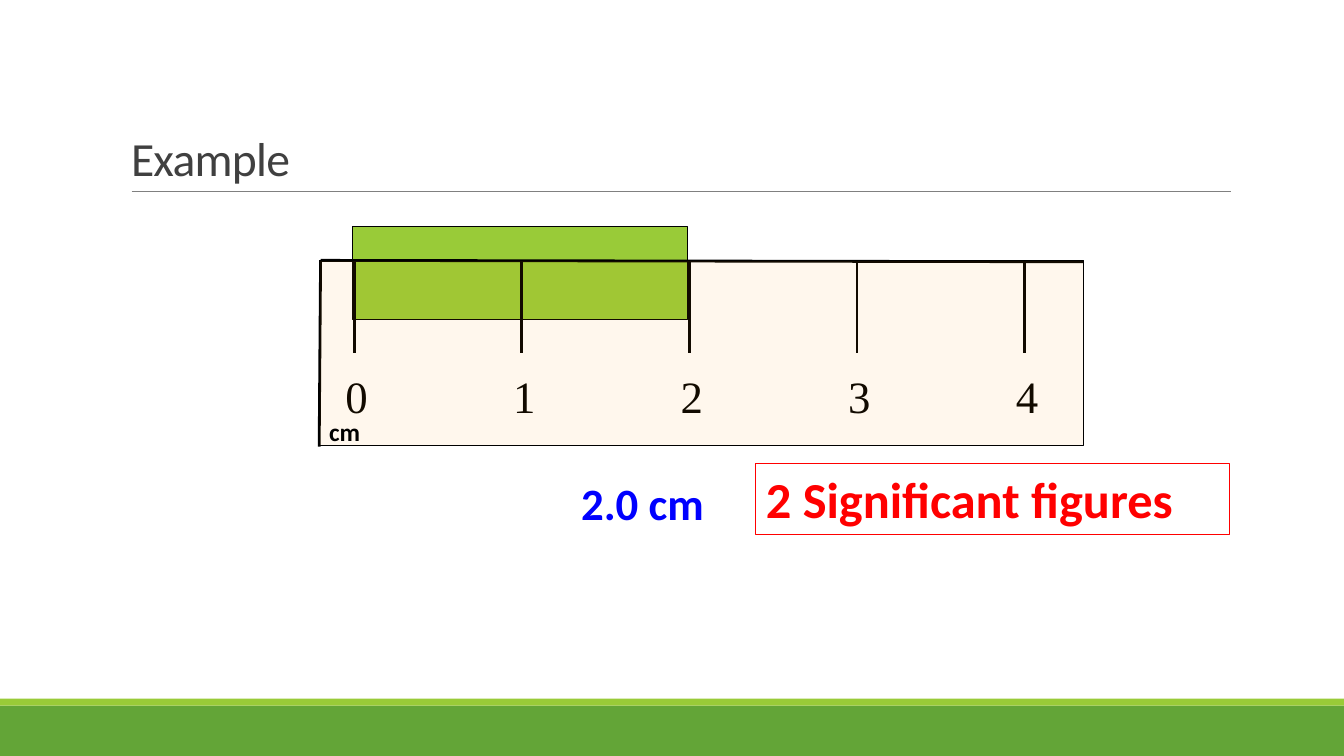
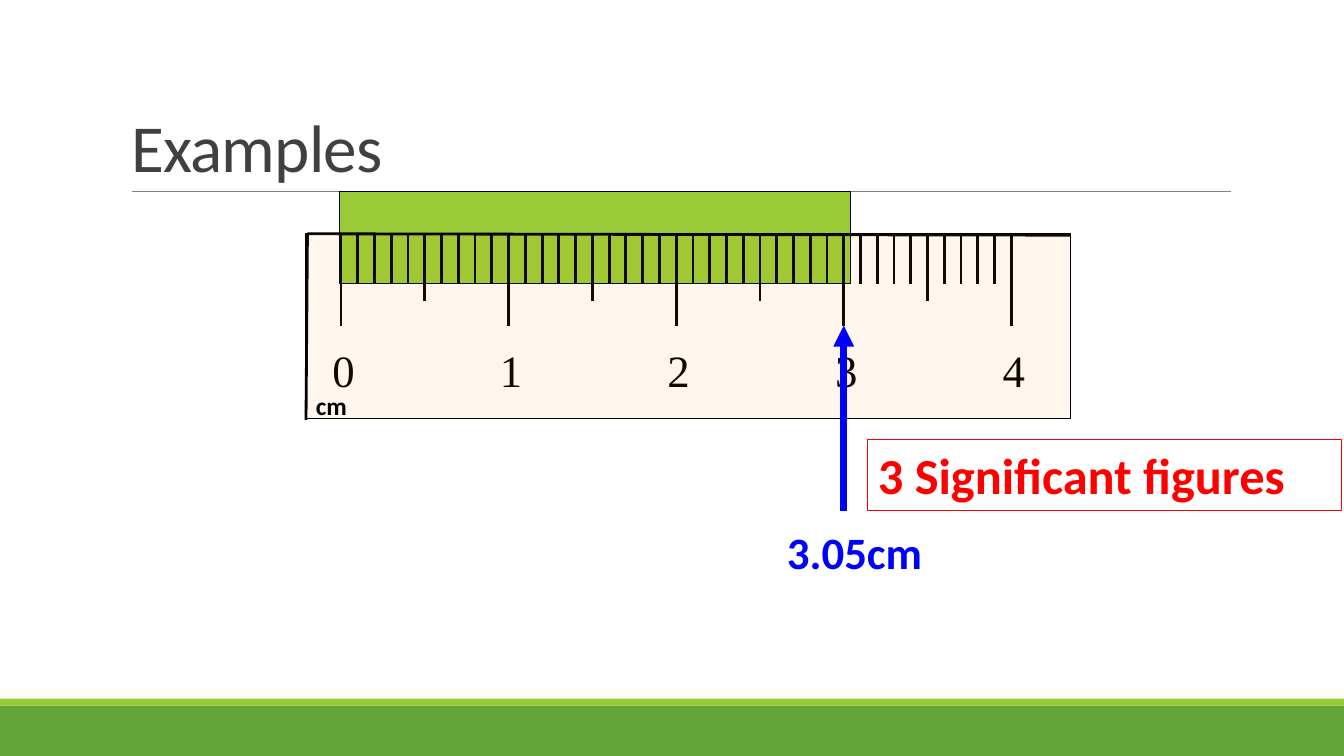
from lxml import etree
from pptx import Presentation
from pptx.dml.color import RGBColor
from pptx.enum.shapes import MSO_CONNECTOR, MSO_SHAPE
from pptx.enum.text import MSO_ANCHOR, MSO_AUTO_SIZE, PP_ALIGN
from pptx.oxml.ns import qn
from pptx.util import Pt

RECT = MSO_SHAPE.RECTANGLE
LINE = MSO_CONNECTOR.STRAIGHT
LEFT = PP_ALIGN.LEFT
BOTTOM = MSO_ANCHOR.BOTTOM
NO_FIT = MSO_AUTO_SIZE.NONE

GREEN = RGBColor(0x63, 0xA5, 0x37)
LIME = RGBColor(0x99, 0xCB, 0x38)
ORANGE = RGBColor(0xFF, 0x99, 0x00)
GRAY = RGBColor(0x80, 0x80, 0x80)
DARK = RGBColor(0x40, 0x40, 0x40)
BLACK = RGBColor(0, 0, 0)
BLUE = RGBColor(0, 0, 0xFF)
RED = RGBColor(0xFF, 0, 0)

SANS = "Calibri"
SERIF = "Times New Roman"

WIDTH, HEIGHT = 960, 540
RULE_Y = 136.8
TITLE_BOX = (86.4, 22.3, 792, 114.5)

RULER_W, RULER_H = 546, 132
ZERO_X = 25      # from the ruler's left edge to its zero mark
CM = 119.7       # drawn length of one centimetre
LAST = 4


def points(*sizes):
    return [Pt(size) for size in sizes]


def add_rect(shapes, box, fill, edge=None):
    rect = shapes.add_shape(RECT, *points(*box))
    rect.shadow.inherit = False
    rect.fill.solid()
    rect.fill.fore_color.rgb = fill
    if edge is None:
        rect.line.fill.background()
    else:
        rect.line.color.rgb = edge
        rect.line.width = Pt(0.75)
    return rect


def add_line(shapes, start, end, color=BLACK, width=2):
    line = shapes.add_connector(LINE, *points(*start, *end))
    line.line.color.rgb = color
    line.line.width = Pt(width)
    etree.SubElement(line.element.find(qn("p:spPr")), qn("a:effectLst"))
    return line


def style(frame, size, color, font=SANS, bold=False):
    part = frame.paragraphs[0]
    part.alignment = LEFT
    face = part.runs[0].font
    face.name, face.size, face.bold = font, Pt(size), bold
    face.color.rgb = color


def add_text(shapes, box, text, size, color, font=SANS, bold=True, wrap=False):
    label = shapes.add_textbox(*points(*box))
    label.text_frame.word_wrap = wrap
    label.text_frame.text = text
    style(label.text_frame, size, color, font, bold)
    return label


def set_layout(layout, slide):
    """Draw the shared bands and rule, then move them into the layout."""
    shapes = slide.shapes
    parts = [
        add_rect(shapes, (0, 504, WIDTH, 36), GREEN),
        add_rect(shapes, (0, 499, WIDTH, 5), LIME),
        add_line(shapes, (94, RULE_Y), (879, RULE_Y), GRAY, 0.5),
    ]
    for part in parts:
        layout.shapes.element.append(part.element)


def set_title(slide, text, size):
    title = slide.shapes.title
    title.left, title.top, title.width, title.height = points(*TITLE_BOX)
    frame = title.text_frame
    frame.text = text
    frame.auto_size = NO_FIT
    frame.vertical_anchor = BOTTOM
    frame.paragraphs[0].line_spacing = 0.85
    style(frame, size, DARK)
    for props in title.element.iter(qn("a:rPr")):
        props.set("spc", "-50")


def add_ruler(slide, left, top, length, rise, parts):
    """Draw a block of length cm and a ruler with parts marks per cm."""
    zero = left + ZERO_X
    block = (zero - 1, top - rise, length * CM, 66)
    add_rect(slide.shapes, block, LIME, BLACK)

    shapes = slide.shapes.add_group_shape().shapes
    add_line(shapes, (left + 1, top), (left + RULER_W, top + 1))
    add_line(shapes, (left + 1, top), (left, top + RULER_H + 1))
    for mark in range(LAST * parts + 1):
        x = zero + mark * CM / parts
        whole, rest = divmod(mark, parts)
        if rest == 0:
            tall = 66
            add_text(shapes, (x - 13.3, top + 74, 30.4, 45.4), str(whole),
                     32, BLACK, SERIF, False)
        else:
            tall = 48 if rest * 2 == parts else 36
        add_line(shapes, (x, top), (x, top + tall))

    body = add_rect(shapes, (left, top, RULER_W, RULER_H), ORANGE, BLACK)
    tint = body.element.find(".//" + qn("a:srgbClr"))
    etree.SubElement(tint, qn("a:alpha"), val="7000")
    add_text(shapes, (left, top + 108, 36.7, 29), "cm", 18, BLACK)


def add_value(slide, left, top, width, text):
    add_text(slide.shapes, (left, top, width, 46), text, 32, BLUE, wrap=True)


def add_count(slide, left, top, text):
    label = add_text(slide.shapes, (left, top, 338.4, 51), text, 36, RED,
                     wrap=True)
    label.line.color.rgb = RED
    label.line.width = Pt(0.75)


def add_arrow(slide, x, start, end):
    arrow = add_line(slide.shapes, (x, start), (x, end), BLUE, 5)
    edge = arrow.element.find(".//" + qn("a:ln"))
    etree.SubElement(edge, qn("a:tailEnd"), type="triangle")


def fill_coarse(slide):
    set_title(slide, "Example", 34)
    add_ruler(slide, 228, 186, 2, 24, 1)
    add_value(slide, 408, 336, 120, "2.0 cm")
    add_count(slide, 540, 331, "2 Significant figures")


def fill_fine(slide):
    set_title(slide, "Examples", 48)
    left, top = 218.6, 167
    add_ruler(slide, left, top, 3.05, top - RULE_Y, 10)
    add_arrow(slide, left + ZERO_X + 3 * CM, 365, 232.6)
    add_value(slide, 555, 371, 140, "3.05cm")
    add_count(slide, 620, 314, "3 Significant figures")


def main():
    deck = Presentation()
    deck.slide_width, deck.slide_height = points(WIDTH, HEIGHT)
    layout = deck.slide_layouts[5]
    first = deck.slides.add_slide(layout)
    set_layout(layout, first)
    fill_coarse(first)
    fill_fine(deck.slides.add_slide(layout))
    deck.save("out.pptx")


if __name__ == "__main__":
    main()
